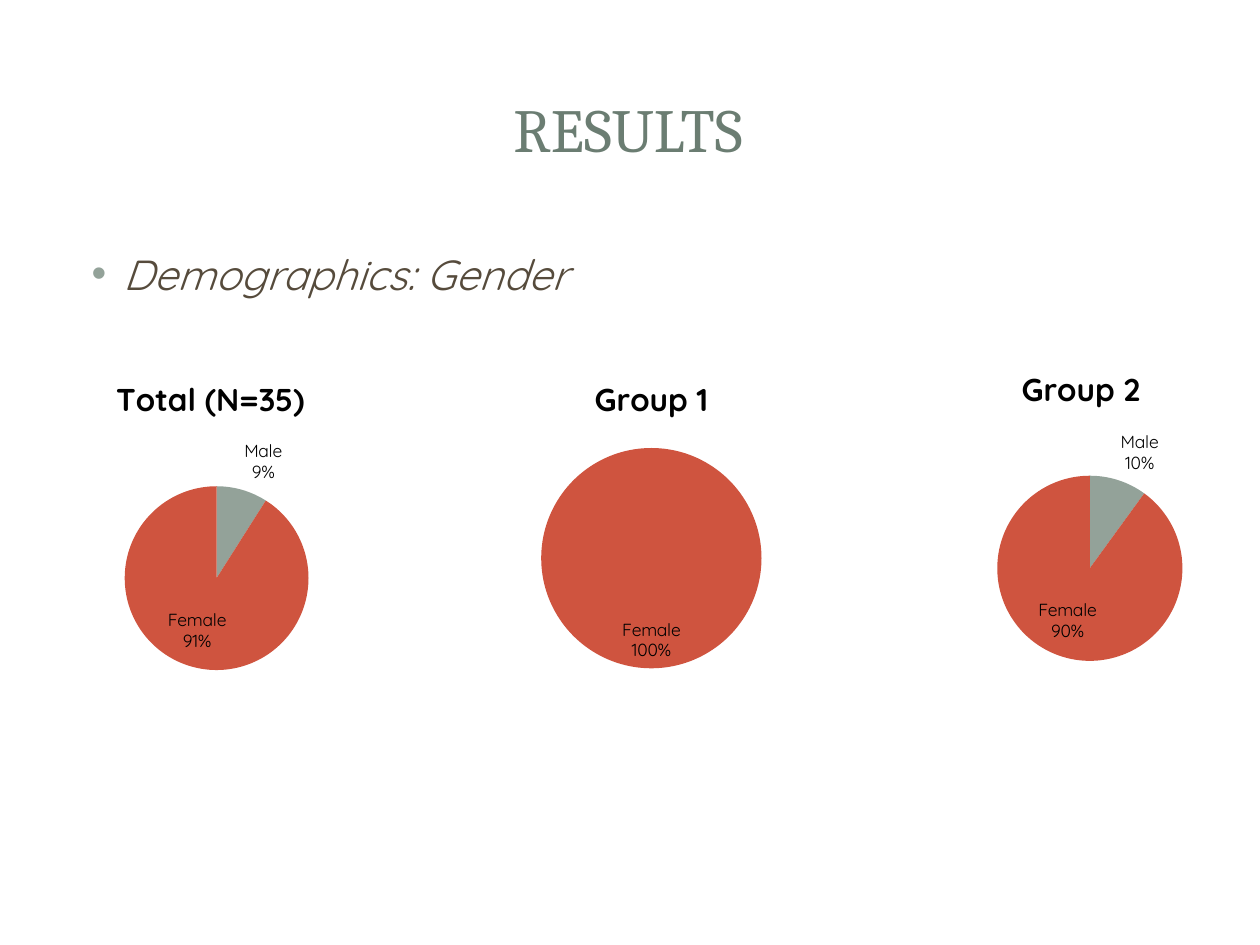
"""Build the results slide: a title, a bullet and a row of gender pies."""
from lxml import etree
from pptx import Presentation
from pptx import util as u
from pptx.chart.data import CategoryChartData
from pptx.dml.color import RGBColor
from pptx.enum import chart as kinds, shapes, text
from pptx.oxml import parse_xml
from pptx.oxml.ns import nsdecls, qn

WIDTH, HEIGHT = 10, 7.5
BODY_FONT = "Quicksand"
PANEL_FILL = "FFFFFF"
PANELS = [
    (shapes.MSO_SHAPE.ROUNDED_RECTANGLE, (0.1, 0.11, 9.8, 7.29), 100),
    (shapes.MSO_SHAPE.RECTANGLE, (0.3, 0.3, 9.4, 1.45), 83),
    (shapes.MSO_SHAPE.RECTANGLE, (0.41, 0.41, 9.17, 1.22), 100),
]
TITLE = ("RESULTS", (0.47, 0.45, 9.03, 1.14),
         {"name": "Cambria", "size": u.Pt(35), "color": "6B7D72"})
BULLET = ("Demographics: Gender", (0.5, 1.92, 9, 4.78),
          {"name": BODY_FONT, "size": u.Pt(24), "italic": True, "color": "564B3C"})
LABEL_FORMAT = {"name": BODY_FONT, "size": u.Pt(10), "bold": False, "color": "000000"}
HEADING_FORMAT = {**LABEL_FORMAT, "size": u.Pt(18), "bold": True}
SLICES = {"Male": ("93A299", kinds.XL_LABEL_POSITION.OUTSIDE_END),
          "Female": ("CF543F", kinds.XL_LABEL_POSITION.INSIDE_END)}
CHART_SIZE = (5, 3)
PIES = [
    {"heading": "Total (N=35)", "values": (9, 91), "corner": (-0.83, 2.83),
     "center": (1.72, 4.59), "diameter": 1.46, "shifts": (None, (-0.04, -0.02))},
    {"heading": "Group 1", "values": (0, 100), "corner": (2.67, 2.83),
     "center": (5.17, 4.43), "diameter": 1.75, "shifts": (None, None)},
    {"heading": "Group 2", "values": (10, 90), "corner": (6.08, 2.75),
     "center": (8.65, 4.51), "diameter": 1.47, "shifts": (None, (-0.04, -0.02))},
]


def color(value):
    return RGBColor.from_string(value)


def style(font, formats):
    for name, value in formats.items():
        if name == "color":
            font.color.rgb = color(value)
        else:
            setattr(font, name, value)


def add_panel(page, kind, place, opacity):
    panel = page.shapes.add_shape(kind, *map(u.Inches, place))
    panel.shadow.inherit = False
    panel.line.fill.background()
    panel.fill.solid()
    panel.fill.fore_color.rgb = color(PANEL_FILL)
    if len(panel.adjustments):
        panel.adjustments[0] = 0.017
    if opacity < 100:
        tone = panel._element.spPr.find(qn("a:solidFill"))[0]
        etree.SubElement(tone, qn("a:alpha"), val=str(opacity * 1000))


def add_text(page, content, place, formats, anchor):
    box = page.shapes.add_textbox(*map(u.Inches, place))
    frame = box.text_frame
    frame.word_wrap = True
    frame.vertical_anchor = anchor
    para = frame.paragraphs[0]
    span = para.add_run()
    span.text = content
    style(span.font, formats)
    return para


def add_bullet(para, bullet_color):
    para.space_before = u.Pt(4.8)
    props = para._p.get_or_add_pPr()
    props.set("marL", str(u.Inches(0.38)))
    props.set("indent", str(u.Inches(-0.25)))
    holder = etree.SubElement(props, qn("a:buClr"))
    etree.SubElement(holder, qn("a:srgbClr"), val=bullet_color)
    etree.SubElement(props, qn("a:buFont"), typeface="Arial")
    etree.SubElement(props, qn("a:buChar"), char="•")


def make_layout(shares, modes=""):
    sides = "".join(f'<c:{tag} val="{share:.3f}"/>' for tag, share in zip("xywh", shares))
    return parse_xml(f'<c:layout {nsdecls("c")}><c:manualLayout>{modes}{sides}'
                     '</c:manualLayout></c:layout>')


def place_plot(chart, pie):
    area = chart._chartSpace.chart.plotArea
    for old in area.findall(qn("c:layout")):
        area.remove(old)
    starts = [(center - pie["diameter"] / 2 - corner) / size for center, corner, size
              in zip(pie["center"], pie["corner"], CHART_SIZE)]
    shares = [pie["diameter"] / size for size in CHART_SIZE]
    modes = '<c:layoutTarget val="inner"/><c:xMode val="edge"/><c:yMode val="edge"/>'
    area.insert(0, make_layout(starts + shares, modes))


def finish_label(label, value, shift):
    if not value:
        for child in list(label)[1:]:
            label.remove(child)
        etree.SubElement(label, qn("c:delete"), val="1")
        return
    for tag, flag in {"showVal": "0", "showCatName": "1", "showPercent": "1"}.items():
        label.find(qn(f"c:{tag}")).set("val", flag)
    etree.SubElement(label, qn("c:separator")).text = "\n"
    if shift:
        label.insert(1, make_layout(shift))


def add_pie(page, pie):
    data = CategoryChartData()
    data.categories = list(SLICES)
    data.add_series("Series 1", pie["values"])
    chart = page.shapes.add_chart(kinds.XL_CHART_TYPE.PIE,
                                  *map(u.Inches, pie["corner"] + CHART_SIZE), data).chart
    chart.has_legend = False
    style(chart.font, LABEL_FORMAT)
    heading = chart.chart_title.text_frame
    heading.text = pie["heading"]
    style(heading.paragraphs[0].runs[0].font, HEADING_FORMAT)
    plot = chart.plots[0]
    plot.vary_by_categories = True
    series = plot.series[0]
    labels = series.data_labels
    labels.show_category_name = labels.show_percentage = True
    labels.show_value = False
    style(labels.font, LABEL_FORMAT)
    for index, (fill, position) in enumerate(SLICES.values()):
        point = series.points[index]
        point.format.fill.solid()
        point.format.fill.fore_color.rgb = color(fill)
        point.data_label.position = position
        label = labels._element.findall(qn("c:dLbl"))[index]
        finish_label(label, pie["values"][index], pie["shifts"][index])
    place_plot(chart, pie)


def main():
    deck = Presentation()
    deck.slide_width, deck.slide_height = u.Inches(WIDTH), u.Inches(HEIGHT)
    page = deck.slides.add_slide(deck.slide_layouts[6])
    for panel in PANELS:
        add_panel(page, *panel)
    title = add_text(page, *TITLE, text.MSO_ANCHOR.MIDDLE)
    title.alignment = text.PP_ALIGN.CENTER
    add_bullet(add_text(page, *BULLET, text.MSO_ANCHOR.TOP), "93A299")
    for pie in PIES:
        add_pie(page, pie)
    deck.save("out.pptx")


if __name__ == "__main__":
    main()
